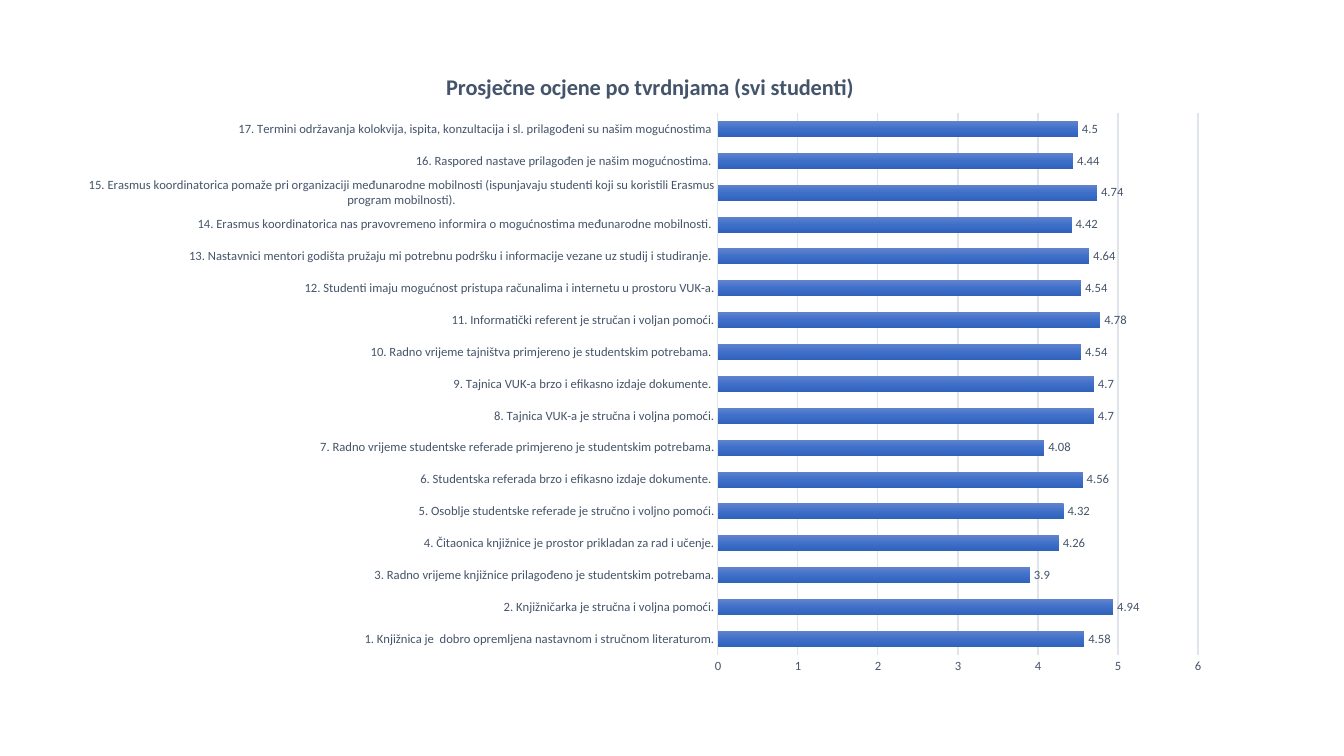
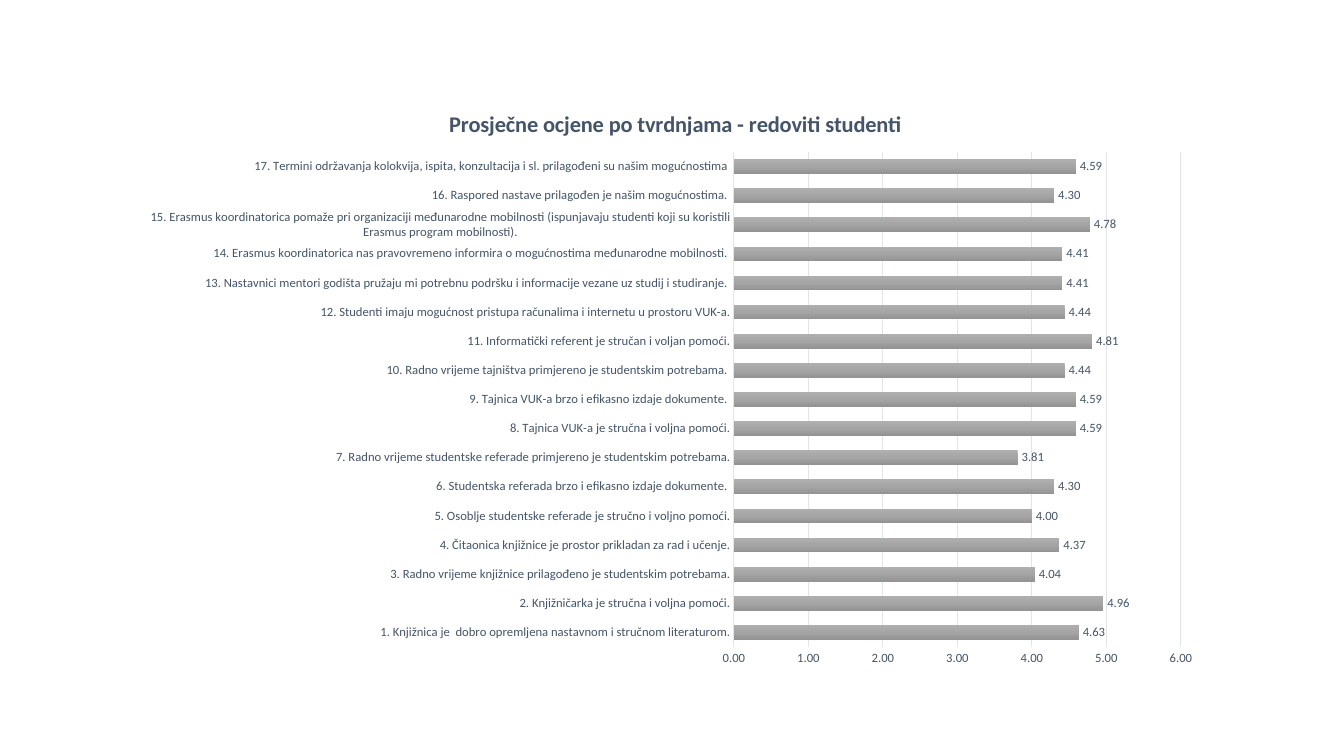
from lxml.etree import SubElement
from pptx import Presentation
from pptx.chart.data import CategoryChartData
from pptx.dml.color import RGBColor
from pptx.enum.chart import XL_CHART_TYPE as ChartType
from pptx.enum.chart import XL_LABEL_POSITION as LabelPosition
from pptx.enum.chart import XL_TICK_MARK as TickMark
from pptx.oxml import parse_xml
from pptx.oxml.ns import nsdecls, qn
from pptx.util import Pt

FONT = "Calibri"
SLATE = RGBColor(0x44, 0x54, 0x6A)
GRID = RGBColor(0xE0, 0xE5, 0xEB)
BLUES = [RGBColor(0x61, 0x83, 0xCB), RGBColor(0x3E, 0x70, 0xCA), RGBColor(0x30, 0x62, 0xBB)]
GRAYS = [RGBColor(0xAF, 0xAF, 0xAF), RGBColor(0xA5, 0xA5, 0xA5), RGBColor(0x93, 0x93, 0x93)]

STATEMENTS = [
    "1. Knjižnica je  dobro opremljena nastavnom i stručnom literaturom.",
    "2. Knjižničarka je stručna i voljna pomoći.",
    "3. Radno vrijeme knjižnice prilagođeno je studentskim potrebama.",
    "4. Čitaonica knjižnice je prostor prikladan za rad i učenje.",
    "5. Osoblje studentske referade je stručno i voljno pomoći.",
    "6. Studentska referada brzo i efikasno izdaje dokumente. ",
    "7. Radno vrijeme studentske referade primjereno je studentskim potrebama.",
    "8. Tajnica VUK-a je stručna i voljna pomoći.",
    "9. Tajnica VUK-a brzo i efikasno izdaje dokumente. ",
    "10. Radno vrijeme tajništva primjereno je studentskim potrebama. ",
    "11. Informatički referent je stručan i voljan pomoći.",
    "12. Studenti imaju mogućnost pristupa računalima i internetu u prostoru VUK-a.",
    "13. Nastavnici mentori godišta pružaju mi potrebnu podršku i informacije vezane uz "
    "studij i studiranje. ",
    "14. Erasmus koordinatorica nas pravovremeno informira o mogućnostima međunarodne "
    "mobilnosti. ",
    "15. Erasmus koordinatorica pomaže pri organizaciji međunarodne mobilnosti "
    "(ispunjavaju studenti koji su koristili Erasmus program mobilnosti).",
    "16. Raspored nastave prilagođen je našim mogućnostima. ",
    "17. Termini održavanja kolokvija, ispita, konzultacija i sl. prilagođeni su našim "
    "mogućnostima ",
]

# Boxes are left, top, width, height in px; the title is placed by its left and top.
RATINGS = [
    {
        "title": "Prosječne ocjene po tvrdnjama (svi studenti)",
        "scores": [4.58, 4.94, 3.9, 4.26, 4.32, 4.56, 4.08, 4.7, 4.7, 4.54, 4.78, 4.54,
                   4.64, 4.42, 4.74, 4.44, 4.5],
        "number_format": "General",
        "gradient": BLUES,
        "chart_box": (66, 45, 1159, 641),
        "plot_box": (718, 113, 480, 542),
        "title_at": (442, 68),
    },
    {
        "title": "Prosječne ocjene po tvrdnjama - redoviti studenti",
        "scores": [4.63, 4.96, 4.04, 4.37, 4, 4.3, 3.81, 4.59, 4.59, 4.44, 4.81, 4.44,
                   4.41, 4.41, 4.78, 4.3, 4.59],
        "number_format": "0.00",
        "gradient": GRAYS,
        "chart_box": (129, 82, 1086, 596),
        "plot_box": (734, 152, 447, 495),
        "title_at": (445, 105),
    },
]

SLIDE_SIZE = (1344, 756)
PX_PER_INCH = 100.8
BLANK_LAYOUT = 6


def px(length):
    return round(length * 914400 / PX_PER_INCH)


def style_font(font, size=9, bold=False, color=SLATE):
    font.name = FONT
    font.size = Pt(size)
    font.bold = bold
    font.color.rgb = color


def write(text_frame, text, **font_format):
    text_frame.text = text
    style_font(text_frame.paragraphs[0].runs[0].font, **font_format)


def set_layout(element, index, chart_box, box):
    """Fix a chart part at a px box, given as fractions of the chart."""
    for old_layout in element.findall(qn("c:layout")):
        element.remove(old_layout)
    left, top, width, height = chart_box
    fractions = [(box[0] - left) / width, (box[1] - top) / height]
    fractions += [side / whole for side, whole in zip(box[2:], (width, height))]
    layout = parse_xml(f"<c:layout {nsdecls('c')}><c:manualLayout/></c:layout>")
    manual = layout[0]
    if len(box) == 4:
        SubElement(manual, qn("c:layoutTarget"), val="inner")
    for name in ("xMode", "yMode"):
        SubElement(manual, qn(f"c:{name}"), val="edge")
    for name, fraction in zip("xywh", fractions):
        SubElement(manual, qn(f"c:{name}"), val=f"{fraction:.4f}")
    element.insert(index, layout)


def fill_gradient(series, colors):
    """Fill bars from top to bottom with evenly spaced colours."""
    fill = series.format.fill
    fill.gradient()
    fill.gradient_angle = 270
    stops = series._element.find(f"{qn('c:spPr')}/{qn('a:gradFill')}/{qn('a:gsLst')}")
    for stop in list(stops):
        stops.remove(stop)
    for index, color in enumerate(colors):
        position = index * 100000 // (len(colors) - 1)
        stop = SubElement(stops, qn("a:gs"), pos=str(position))
        SubElement(stop, qn("a:srgbClr"), val=str(color))


def style_line(line):
    line.color.rgb = GRID
    line.width = Pt(0.75)


def style_axes(chart, number_format):
    category_axis, value_axis = chart.category_axis, chart.value_axis
    for axis in (category_axis, value_axis):
        axis.major_tick_mark = axis.minor_tick_mark = TickMark.NONE
        style_font(axis.tick_labels.font)
    style_line(category_axis.format.line)
    category_axis.has_major_gridlines = False
    value_axis.format.line.fill.background()
    value_axis.has_major_gridlines = True
    style_line(value_axis.major_gridlines.format.line)
    value_axis.minimum_scale, value_axis.maximum_scale = 0, 6
    value_axis.major_unit = 1
    value_axis.tick_labels.number_format = number_format
    value_axis.tick_labels.number_format_is_linked = False


def add_rating_chart(slide, rating):
    data = CategoryChartData()
    data.categories = STATEMENTS
    data.add_series("Series 1", rating["scores"])
    chart_box = rating["chart_box"]
    chart = slide.shapes.add_chart(
        ChartType.BAR_CLUSTERED, *map(px, chart_box), data
    ).chart
    chart.has_legend = False
    style_font(chart.font, size=10)
    style_axes(chart, rating["number_format"])

    chart.has_title = True
    title = chart.chart_title
    write(title.text_frame, rating["title"], size=16, bold=True)
    title.include_in_layout = False
    set_layout(title._element, 1, chart_box, rating["title_at"])

    plot = chart.plots[0]
    plot.gap_width = 100
    plot.vary_by_categories = False
    set_layout(plot._element.getparent(), 0, chart_box, rating["plot_box"])
    fill_gradient(plot.series[0], rating["gradient"])
    plot.has_data_labels = True
    labels = plot.data_labels
    labels.show_value = True
    labels.position = LabelPosition.OUTSIDE_END
    labels.number_format = rating["number_format"]
    labels.number_format_is_linked = False
    style_font(labels.font)


def main():
    presentation = Presentation()
    presentation.slide_width, presentation.slide_height = map(px, SLIDE_SIZE)
    for rating in RATINGS:
        slide = presentation.slides.add_slide(presentation.slide_layouts[BLANK_LAYOUT])
        add_rating_chart(slide, rating)
    presentation.save("out.pptx")


if __name__ == "__main__":
    main()
